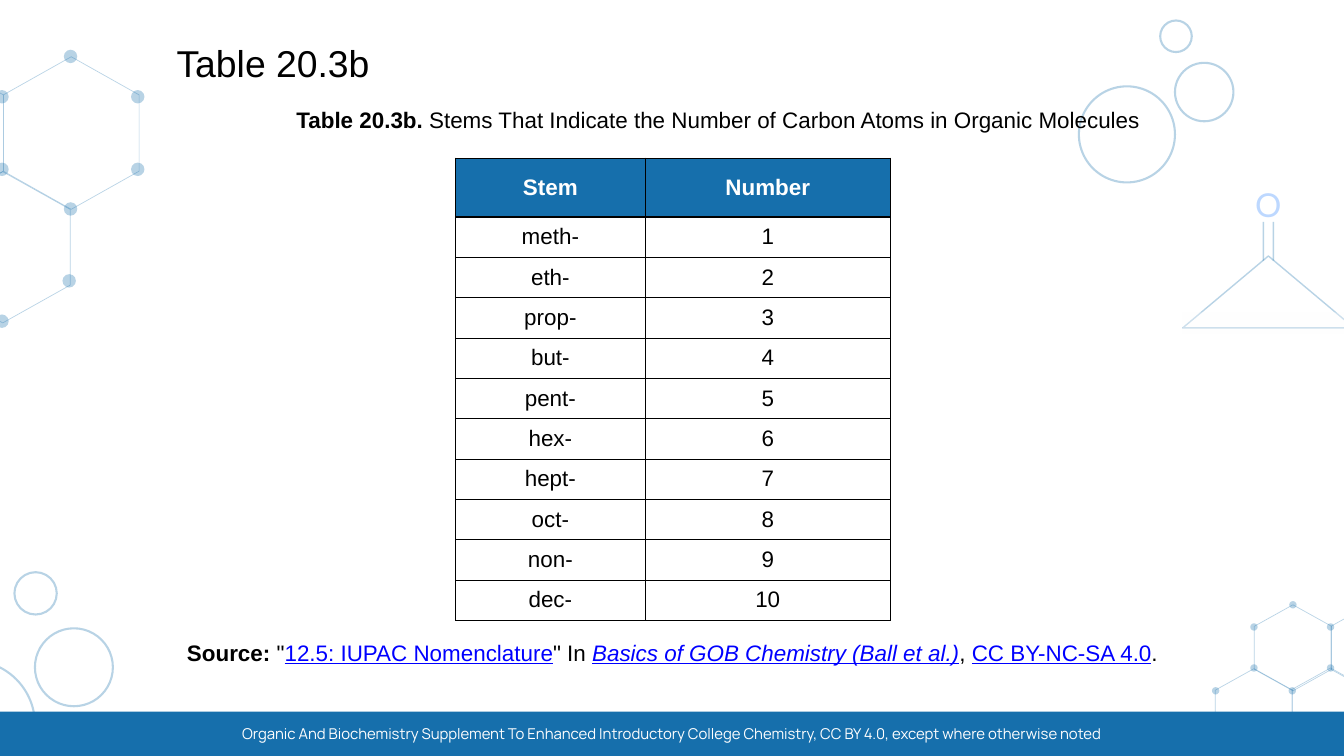
from dataclasses import dataclass

from lxml import etree
from pptx import Presentation
from pptx import util as u
from pptx.dml.color import RGBColor
from pptx.enum import shapes, text
from pptx.oxml.ns import qn

COLORS = {"blue": "166FAC", "black": "000000", "white": "FFFFFF", "pale": "FEFEFE",
          "link": "0000FF", "oxygen": "267FFF"}
FADED = 30


@dataclass
class Box:
    left: float
    top: float
    width: float
    height: float

    def lengths(self) -> list:
        return [u.Inches(v) for v in (self.left, self.top, self.width, self.height)]


@dataclass
class Run:
    words: str
    color: str = "black"
    size: float = 24
    font: str = "Arial"
    bold: bool = False
    italic: bool = False
    underline: bool = False
    opacity: int = 100


@dataclass
class Hexagon:
    x: float
    y: float
    length: float
    breadth: float


@dataclass
class Circle:
    x: float
    y: float
    diameter: float

    def box(self) -> Box:
        radius = self.diameter / 2
        return Box(self.x - radius, self.y - radius, self.diameter, self.diameter)


def paint(fill, color: str, opacity: int = 100) -> None:
    fill.solid()
    fill.fore_color.rgb = RGBColor.from_string(COLORS[color])
    if opacity < 100:
        for node in fill._xPr.iter(qn("a:srgbClr")):
            etree.SubElement(node, qn("a:alpha"), val=str(opacity * 1000))


def add_figure(slide, preset, box: Box, fill: str = "", line_width: float = 0,
               opacity: int = FADED):
    shape = slide.shapes.add_shape(preset, *box.lengths())
    shape.shadow.inherit = False
    if fill:
        paint(shape.fill, fill, opacity)
    else:
        shape.fill.background()
    if line_width:
        paint(shape.line.fill, "blue", opacity)
        shape.line.width = u.Pt(line_width)
    else:
        shape.line.fill.background()
    return shape


def add_molecule(slide, hexagons: list[Hexagon], atoms: list[tuple], diameter: float) -> None:
    for ring in hexagons:
        box = Box(ring.x - ring.length / 2, ring.y - ring.breadth / 2, ring.length, ring.breadth)
        shape = add_figure(slide, shapes.MSO_SHAPE.HEXAGON, box, line_width=0.75)
        shape.adjustments[0] = 0.25 * ring.length / ring.breadth
        shape.rotation = 90
    for x, y in atoms:
        add_figure(slide, shapes.MSO_SHAPE.OVAL, Circle(x, y, diameter).box(), fill="blue")


def write(paragraph, runs: list[Run]) -> None:
    for item in runs:
        run = paragraph.add_run()
        run.text = item.words
        formats = {"name": item.font, "size": u.Pt(item.size), "bold": item.bold,
                   "italic": item.italic, "underline": item.underline}
        for name, value in formats.items():
            setattr(run.font, name, value)
        paint(run.font.fill, item.color, item.opacity)


def add_text(slide, box: Box, runs: list[Run], align=text.PP_ALIGN.CENTER,
             anchor=text.MSO_ANCHOR.TOP):
    frame = slide.shapes.add_textbox(*box.lengths()).text_frame
    frame.word_wrap = True
    frame.vertical_anchor = anchor
    frame.paragraphs[0].alignment = align
    write(frame.paragraphs[0], runs)
    return frame


def set_no_margins(target) -> None:
    for side in ("left", "top", "right", "bottom"):
        setattr(target, f"margin_{side}", 0)


def add_borders(cell, bottom: float, top: float) -> None:
    properties = cell._tc.get_or_add_tcPr()
    for index, (tag, width) in enumerate({"lnL": 1, "lnR": 1, "lnT": top, "lnB": bottom}.items()):
        line = etree.Element(qn(f"a:{tag}"), w=str(u.Pt(width)))
        fill = etree.SubElement(line, qn("a:solidFill"))
        etree.SubElement(fill, qn("a:srgbClr"), val=COLORS["black"])
        properties.insert(index, line)


def add_stem_table(slide, box: Box, widths: list[float], header: float, row: float) -> None:
    stems = ["meth-", "eth-", "prop-", "but-", "pent-", "hex-", "hept-", "oct-", "non-", "dec-"]
    rows = [("Stem", "Number")] + [(stem, str(n)) for n, stem in enumerate(stems, 1)]
    table = slide.shapes.add_table(len(rows), len(widths), *box.lengths()).table
    table.horz_banding = False
    for column, width in zip(table.columns, widths):
        column.width = u.Inches(width)
    for r, values in enumerate(rows):
        table.rows[r].height = u.Inches(row if r else header)
        for c, value in enumerate(values):
            cell = table.cell(r, c)
            set_no_margins(cell)
            cell.vertical_anchor = text.MSO_ANCHOR.MIDDLE
            paragraph = cell.text_frame.paragraphs[0]
            paragraph.alignment = text.PP_ALIGN.CENTER
            write(paragraph, [Run(value, "black" if r else "white", bold=r == 0)])
            if r:
                cell.fill.background()
            else:
                paint(cell.fill, "blue")
            add_borders(cell, bottom=1 if r else 2, top=2 if r == 1 else 1)


def add_ketone(slide) -> None:
    add_figure(slide, shapes.MSO_SHAPE.ISOSCELES_TRIANGLE, Box(17.6, 3.81, 2.55, 1.07),
               line_width=1.5)
    add_figure(slide, shapes.MSO_SHAPE.RECTANGLE, Box(17.6, 4.65, 2.55, 0.32), fill="pale")
    for x in (18.95, 18.8):
        bond = slide.shapes.add_connector(shapes.MSO_CONNECTOR.STRAIGHT, u.Inches(x),
                                          u.Inches(3.3), u.Inches(x), u.Inches(3.88))
        paint(bond.line.fill, "blue", FADED)
        bond.line.width = u.Pt(1.69)
        etree.SubElement(bond._element.spPr, qn("a:effectLst"))
    frame = add_text(slide, Box(18.67, 2.65, 0.41, 0.65),
                     [Run("O", "oxygen", 35.3, "Lato", opacity=FADED)])
    set_no_margins(frame)
    frame.paragraphs[0].line_spacing = u.Pt(49.5)


def main() -> None:
    presentation = Presentation()
    presentation.slide_width, presentation.slide_height = u.Inches(20), u.Inches(11.25)
    slide = presentation.slides.add_slide(presentation.slide_layouts[6])

    add_figure(slide, shapes.MSO_SHAPE.RECTANGLE, Box(0, 10.59, 20, 0.66), fill="blue", opacity=100)
    add_molecule(slide,
                 [Hexagon(x, y, 1.28, 1.15) for x, y in
                  ((20.38, 9.64), (19.24, 9.64), (19.8, 10.58), (18.66, 10.59))],
                 [(19.24, 9), (19.8, 9.33), (19.8, 9.94), (18.66, 9.94), (19.23, 10.28),
                  (18.09, 10.28), (18.66, 9.33)], 0.11)
    bubbles = [Circle(16.77, 2, 1.43), Circle(17.92, 1.37, 0.87), Circle(17.5, 0.54, 0.47),
               Circle(-0.43, 10.78, 1.9), Circle(1.1, 9.93, 1.16), Circle(0.53, 8.83, 0.63)]
    for bubble in bubbles:
        add_figure(slide, shapes.MSO_SHAPE.OVAL, bubble.box(), line_width=2.25)
    add_ketone(slide)
    add_molecule(slide,
                 [Hexagon(1.06, 1.98, 2.27, 2.02), Hexagon(-0.97, 1.98, 2.27, 2.04),
                  Hexagon(0.04, 3.68, 2.25, 2.01)],
                 [(1.05, 0.84), (2.05, 1.44), (2.05, 2.52), (0.03, 1.44), (0.03, 2.52),
                  (1.05, 3.11), (1.03, 4.18), (0.03, 4.78)], 0.2)

    add_text(slide, Box(2.53, 0.31, 14.97, 1.25), [Run("Table 20.3b", size=40)],
             text.PP_ALIGN.LEFT, text.MSO_ANCHOR.MIDDLE)
    add_text(slide, Box(2.5, 1.53, 16.37, 0.9), [
        Run("Table 20.3b. ", bold=True),
        Run("Stems That Indicate the Number of Carbon Atoms in Organic Molecules")])
    add_stem_table(slide, Box(6.78, 2.35, 6.47, 6.85), [2.82, 3.65], header=0.88, row=0.6)
    add_text(slide, Box(2.13, 9.46, 15.75, 0.9), [
        Run("Source: ", bold=True), Run('"'),
        Run("12.5: IUPAC Nomenclature", "link", underline=True), Run('" In '),
        Run("Basics of GOB Chemistry (Ball et al.)", "link", italic=True, underline=True),
        Run(", "), Run("CC BY-NC-SA 4.0", "link", underline=True), Run(".")])
    add_text(slide, Box(3.11, 10.72, 13.78, 0.4), [
        Run("Organic And Biochemistry Supplement To Enhanced Introductory College Chemistry, "
            "CC BY 4.0, except where otherwise noted", "white", 16, "Manrope")],
        anchor=text.MSO_ANCHOR.MIDDLE)
    presentation.save("out.pptx")


if __name__ == "__main__":
    main()
